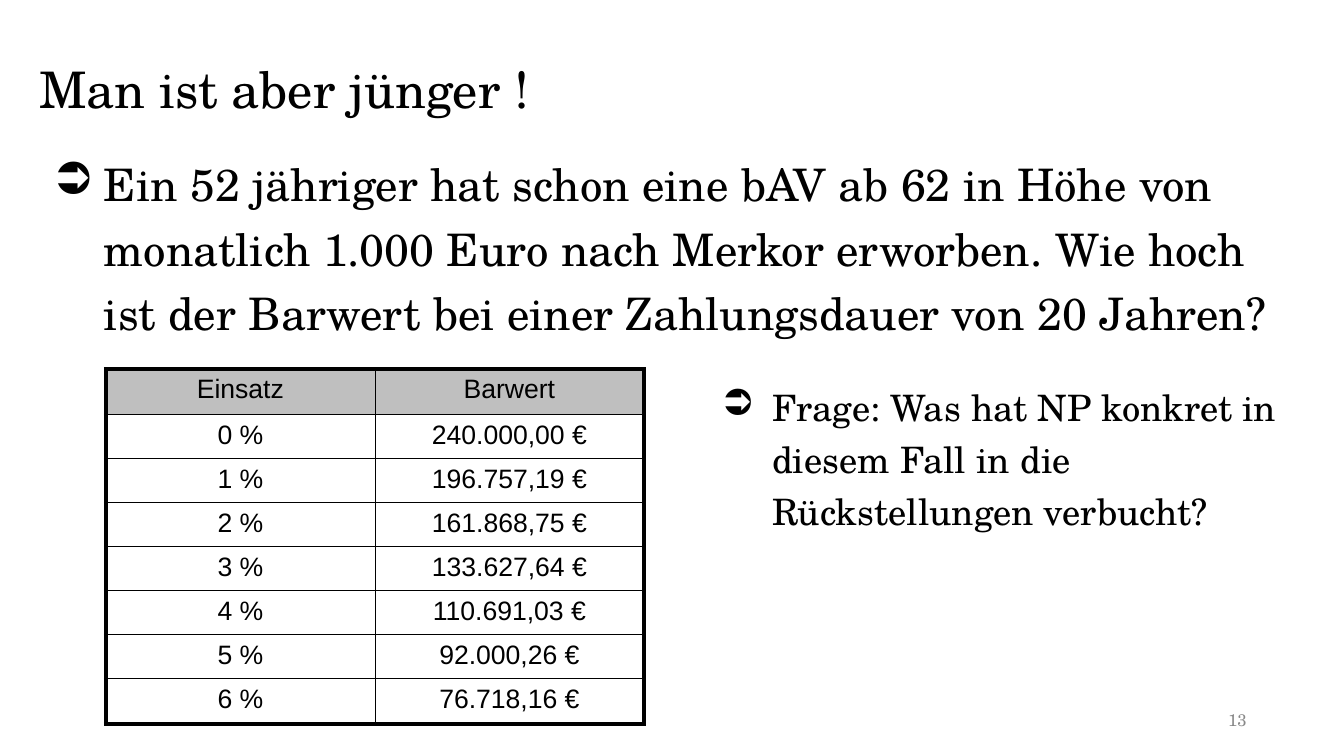
from lxml import etree
from pptx import Presentation
from pptx.dml.color import RGBColor
from pptx.enum.text import MSO_ANCHOR, PP_ALIGN
from pptx.oxml.ns import qn
from pptx.util import Pt

LEFT, CENTER, RIGHT = PP_ALIGN.LEFT, PP_ALIGN.CENTER, PP_ALIGN.RIGHT
TOP, MIDDLE = MSO_ANCHOR.TOP, MSO_ANCHOR.MIDDLE

BLACK = RGBColor(0x00, 0x00, 0x00)
WHITE = RGBColor(0xFF, 0xFF, 0xFF)
NUMBER_GRAY = RGBColor(0x88, 0x88, 0x88)
HEADER_GRAY = RGBColor(0xBF, 0xBF, 0xBF)

SERIF, SANS = "TeX Gyre Schola", "Arial"
THICK, THIN = Pt(3), Pt(0.35)

HEADERS = ("Einsatz", "Barwert")
PRESENT_VALUES = (
    "240.000,00 €",
    "196.757,19 €",
    "161.868,75 €",
    "133.627,64 €",
    "110.691,03 €",
    "92.000,26 €",
    "76.718,16 €",
)


def write_text(paragraph, text, size, font=SERIF, color=BLACK, align=LEFT):
    paragraph.alignment = align
    run = paragraph.add_run()
    run.text = text
    run.font.size = Pt(size)
    run.font.name = font
    run.font.color.rgb = color


def add_text(slide, text, left, top, width, height, anchor=TOP, **text_format):
    shape = slide.shapes.add_textbox(Pt(left), Pt(top), Pt(width), Pt(height))
    frame = shape.text_frame
    frame.word_wrap = True
    frame.vertical_anchor = anchor
    frame.margin_left = frame.margin_right = Pt(3.6)
    frame.margin_top = frame.margin_bottom = Pt(3.6)
    paragraph = frame.paragraphs[0]
    write_text(paragraph, text, **text_format)
    return paragraph


def add_bullet(paragraph, level, indent):
    paragraph.level = level
    paragraph.line_spacing = 1.2
    properties = paragraph._p.get_or_add_pPr()
    properties.set("marL", str(Pt(indent)))
    properties.set("indent", str(-Pt(36)))
    etree.SubElement(properties, qn("a:buChar")).set("char", "➲")


def set_borders(cell, widths):
    properties = cell._tc.get_or_add_tcPr()
    for position, (side, width) in enumerate(widths.items()):
        line = etree.Element(qn(f"a:ln{side}"), w=str(width))
        fill = etree.SubElement(line, qn("a:solidFill"))
        etree.SubElement(fill, qn("a:srgbClr")).set("val", str(BLACK))
        properties.insert(position, line)


def add_value_table(slide, rows, left, top, column_width, row_height, edge_height):
    last_row, last_column = len(rows) - 1, len(rows[0]) - 1
    heights = [edge_height, *[row_height] * (len(rows) - 2), edge_height]
    frame = slide.shapes.add_table(
        len(rows), len(rows[0]), Pt(left), Pt(top),
        Pt(column_width * len(rows[0])), Pt(sum(heights)))
    table = frame.table
    for column in table.columns:
        column.width = Pt(column_width)
    for row_index, values in enumerate(rows):
        table.rows[row_index].height = Pt(heights[row_index])
        for column_index, value in enumerate(values):
            cell = table.cell(row_index, column_index)
            cell.margin_left = cell.margin_right = Pt(4.32)
            cell.margin_top = cell.margin_bottom = Pt(4.32)
            cell.fill.solid()
            cell.fill.fore_color.rgb = WHITE if row_index else HEADER_GRAY
            write_text(cell.text_frame.paragraphs[0], value, 19, SANS, align=CENTER)
            set_borders(cell, {
                "L": THICK if column_index == 0 else THIN,
                "R": THICK if column_index == last_column else THIN,
                "T": THICK if row_index == 0 else THIN,
                "B": THICK if row_index == last_row else THIN,
            })


def main():
    presentation = Presentation()
    presentation.slide_width, presentation.slide_height = Pt(960), Pt(540)
    slide = presentation.slides.add_slide(presentation.slide_layouts[6])

    add_text(slide, "Man ist aber jünger !", 24.5, 38.2, 852.5, 48.2, size=36)
    add_text(slide, "13", 678.2, 504, 216, 20.9, anchor=MIDDLE,
             size=12, color=NUMBER_GRAY, align=RIGHT)
    task = add_text(
        slide,
        "Ein 52 jähriger hat schon eine bAV ab 62 in Höhe von monatlich "
        "1.000 Euro nach Merkor erworben. Wie hoch ist der Barwert bei einer "
        "Zahlungsdauer von 20 Jahren?",
        34.6, 100.8, 891.4, 246.2, size=32)
    add_bullet(task, level=0, indent=36)
    question = add_text(
        slide,
        "Frage: Was hat NP konkret in diesem Fall in die Rückstellungen verbucht?",
        475.9, 265, 462.2, 109.4, size=26)
    add_bullet(question, level=1, indent=72)

    rows = [HEADERS]
    rows += [(f"{rate} %", value) for rate, value in enumerate(PRESENT_VALUES)]
    add_value_table(slide, rows, 75.6, 263.5, column_width=192.2,
                    row_height=30.86, edge_height=32.4)

    presentation.save("out.pptx")


if __name__ == "__main__":
    main()
